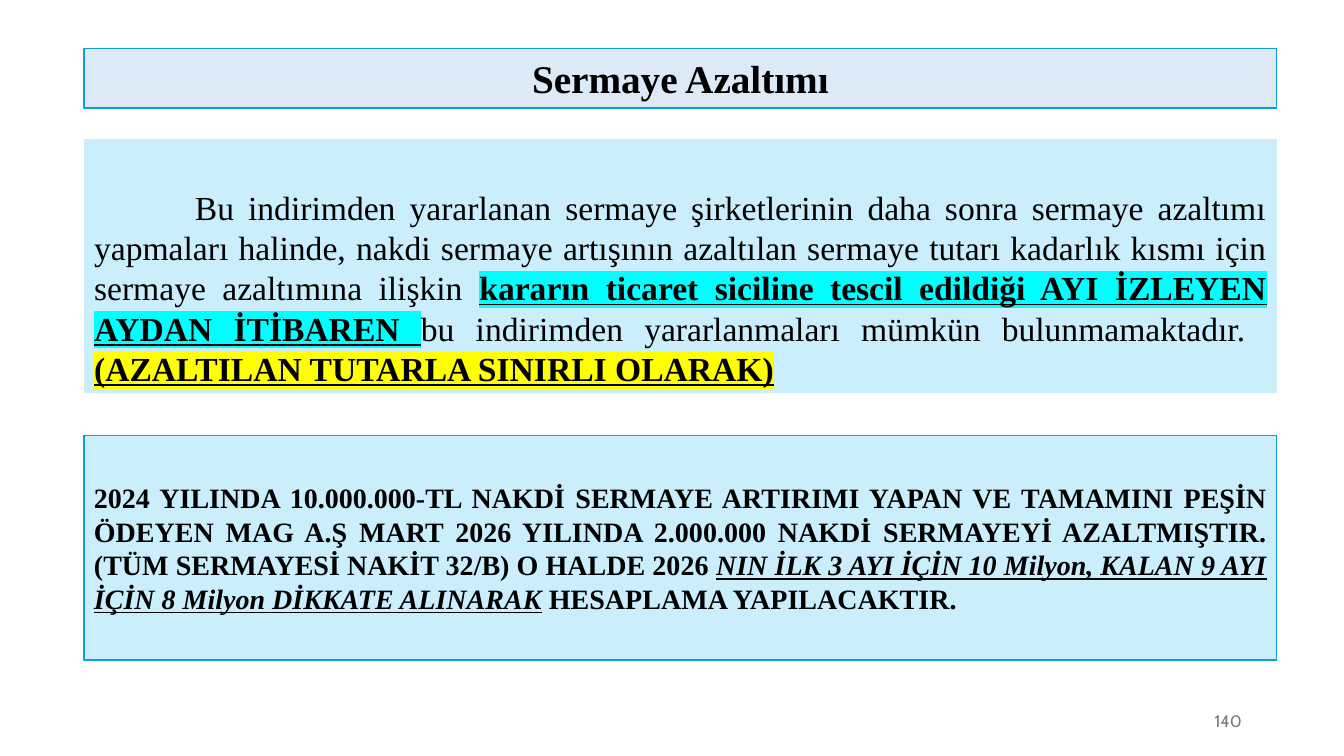
"""Builds the slide on capital reduction."""
from pptx import Presentation
from pptx.dml.color import RGBColor
from pptx.enum.shapes import MSO_SHAPE
from pptx.enum.text import MSO_ANCHOR, MSO_AUTO_SIZE, PP_ALIGN
from pptx.oxml.ns import qn
from pptx.util import Pt
from lxml.etree import SubElement

BLACK = RGBColor(0x00, 0x00, 0x00)
GRAY = RGBColor(0x79, 0x79, 0x79)
SKY = RGBColor(0xCA, 0xEE, 0xFB)
PALE = RGBColor(0xDC, 0xEA, 0xF7)
BLUE = RGBColor(0x0F, 0x9E, 0xD5)
AQUA = RGBColor(0x00, 0xFF, 0xFF)
YELLOW = RGBColor(0xFF, 0xFF, 0x00)
SERIF = "Times New Roman"
LEFT, WIDTH = 60, 852


def place(shape, left, top, width, height):
    shape.left, shape.top = Pt(left), Pt(top)
    shape.width, shape.height = Pt(width), Pt(height)


def paint(shape, fill, line=None):
    shape.fill.solid()
    shape.fill.fore_color.rgb = fill
    if line is None:
        shape.line.fill.background()
    else:
        shape.line.color.rgb = line
        shape.line.width = Pt(1)


def mark(run, color):
    light = SubElement(run.font._element, qn("a:highlight"))
    SubElement(light, qn("a:srgbClr")).set("val", str(color))
    run.font._element.find(qn("a:solidFill")).addnext(light)


def write(shape, runs, size, align, anchor=MSO_ANCHOR.MIDDLE,
          font=SERIF, color=BLACK, indent=0):
    frame = shape.text_frame
    frame.word_wrap = True
    frame.auto_size = MSO_AUTO_SIZE.NONE
    frame.vertical_anchor = anchor
    para = frame.paragraphs[0]
    para.alignment = align
    para.space_before = Pt(0)
    props = para._p.get_or_add_pPr()
    props.set("marL", "0")
    props.set("indent", str(Pt(indent)))
    SubElement(props, qn("a:buNone"))
    for text, style, light in runs:
        run = para.add_run()
        run.text = text
        run.font.size = Pt(size)
        run.font.name = font
        run.font.color.rgb = color
        run.font.bold = "b" in style
        run.font.italic = "i" in style
        run.font.underline = "u" in style
        if light is not None:
            mark(run, light)


def add_title(slide):
    title = slide.shapes.title
    place(title, LEFT, 34.6, WIDTH, 42.5)
    paint(title, PALE, BLUE)
    write(title, [("Sermaye Azaltımı", "b", None)], 28, PP_ALIGN.CENTER)


def add_rule(slide):
    body = slide.placeholders[1]
    place(body, LEFT, 99.4, WIDTH, 181.4)
    paint(body, SKY)
    runs = [
        ("Bu indirimden yararlanan sermaye şirketlerinin daha sonra sermaye "
         "azaltımı yapmaları halinde, nakdi sermaye artışının azaltılan "
         "sermaye tutarı kadarlık kısmı için sermaye azaltımına ilişkin ",
         "", None),
        ("kararın ticaret siciline tescil edildiği AYI İZLEYEN AYDAN "
         "İTİBAREN ", "bu", AQUA),
        ("bu indirimden yararlanmaları mümkün bulunmamaktadır.  ", "", None),
        ("(AZALTILAN TUTARLA SINIRLI OLARAK)", "bu", YELLOW),
    ]
    write(body, runs, 24, PP_ALIGN.JUSTIFY, MSO_ANCHOR.BOTTOM, indent=72)


def add_case(slide):
    box = slide.shapes.add_shape(MSO_SHAPE.RECTANGLE, 0, 0, 0, 0)
    place(box, LEFT, 311, WIDTH, 160.6)
    box.shadow.inherit = False
    paint(box, SKY, BLUE)
    runs = [
        ("2024 YILINDA 10.000.000-TL NAKDİ SERMAYE ARTIRIMI YAPAN VE "
         "TAMAMINI PEŞİN ÖDEYEN MAG A.Ş MART 2026 YILINDA 2.000.000 NAKDİ "
         "SERMAYEYİ AZALTMIŞTIR. (TÜM SERMAYESİ NAKİT 32/B) O HALDE 2026 ",
         "b", None),
        ("NIN İLK 3 AYI İÇİN 10 Milyon, KALAN 9 AYI İÇİN 8 Milyon DİKKATE "
         "ALINARAK", "biu", None),
        (" HESAPLAMA YAPILACAKTIR. ", "b", None),
    ]
    write(box, runs, 20, PP_ALIGN.JUSTIFY)


def add_page(slide):
    box = slide.shapes.add_textbox(0, 0, 0, 0)
    place(box, 678.2, 500.4, 216, 28.8)
    write(box, [("140", "", None)], 12, PP_ALIGN.RIGHT,
          font="Cabin", color=GRAY)


def main():
    deck = Presentation()
    deck.slide_width, deck.slide_height = Pt(960), Pt(540)
    slide = deck.slides.add_slide(deck.slide_layouts[1])
    add_title(slide)
    add_rule(slide)
    add_case(slide)
    add_page(slide)
    deck.save("out.pptx")


if __name__ == "__main__":
    main()
